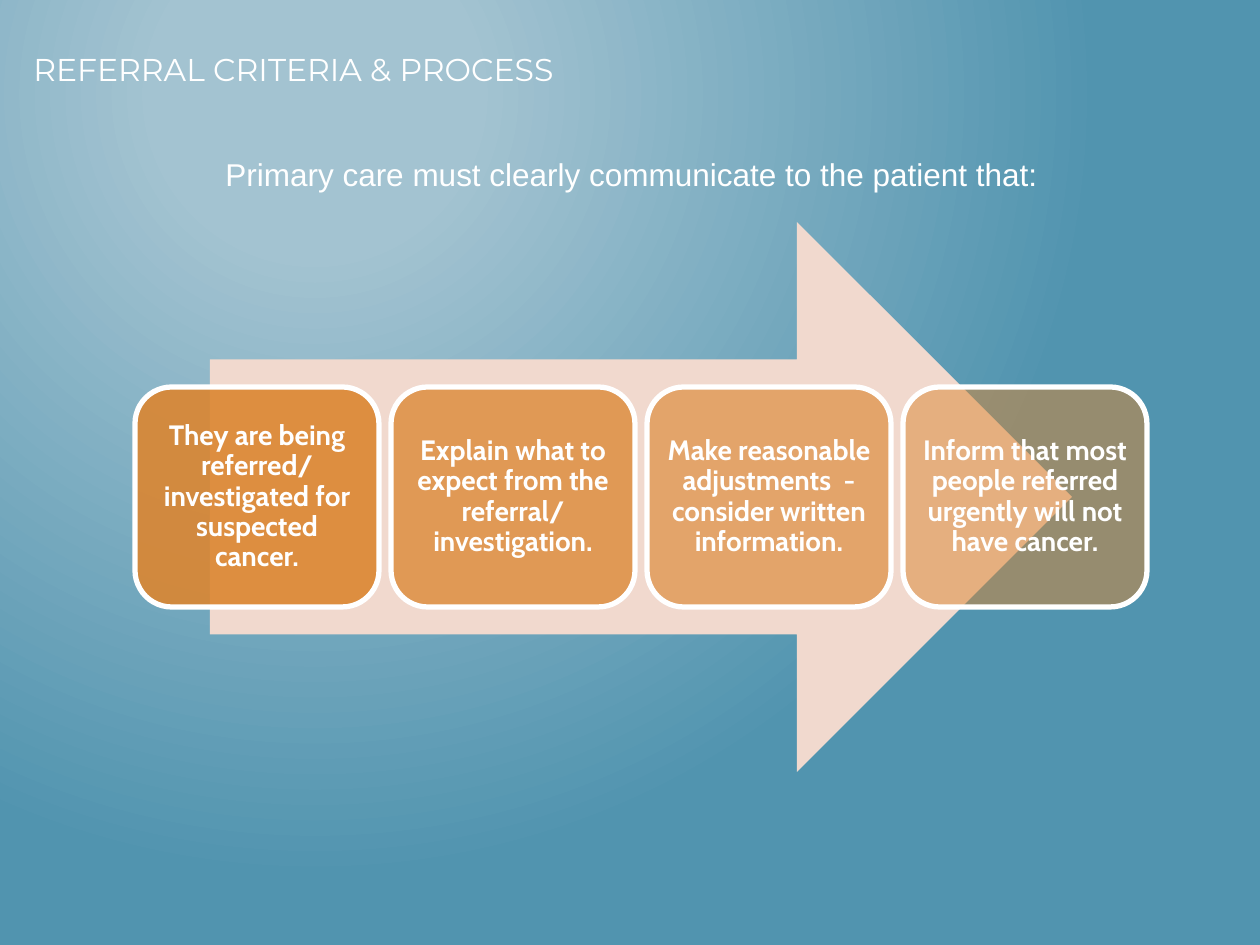
from lxml import etree
from pptx import Presentation
from pptx.dml.color import RGBColor
from pptx.enum.shapes import MSO_SHAPE
from pptx.enum.text import MSO_ANCHOR, MSO_AUTO_SIZE, PP_ALIGN
from pptx.oxml.ns import qn
from pptx.util import Pt

ARROW = MSO_SHAPE.RIGHT_ARROW
ROUND = MSO_SHAPE.ROUNDED_RECTANGLE
TOP, MIDDLE = MSO_ANCHOR.TOP, MSO_ANCHOR.MIDDLE
LEFT, CENTER = PP_ALIGN.LEFT, PP_ALIGN.CENTER
GROW = MSO_AUTO_SIZE.SHAPE_TO_FIT_TEXT

SCALE = 914400 / 126
WHITE, ORANGE, PEACH = "FFFFFF", "DB8631", "F1D9CE"
SKY, SEA = "A3C3D1", "5194AF"
STEPS = [
    ("They are being referred/ investigated for suspected cancer.", 90),
    ("Explain what to expect from the referral/ investigation.", 77),
    ("Make reasonable adjustments  - consider written information.", 63),
    ("Inform that most people referred urgently will not have cancer.", 50),
]


def px(n):
    return round(n * SCALE)


def color(code):
    return RGBColor.from_string(code)


def add_text(shapes, text, box, font="Arial", size=18, bold=False, align=LEFT,
             anchor=TOP, inset=None, lines=None, fit=None):
    shape = shapes.add_textbox(*map(px, box))
    frame = shape.text_frame
    frame.word_wrap = True
    frame.vertical_anchor = anchor
    if fit is not None:
        frame.auto_size = fit
    if inset is not None:
        frame.margin_left = frame.margin_right = px(inset)
        frame.margin_top = frame.margin_bottom = px(inset)
    para = frame.paragraphs[0]
    para.alignment = align
    if lines:
        para.line_spacing = lines
    run = para.add_run()
    run.text = text
    run.font.name = font
    run.font.size = Pt(size)
    run.font.bold = bold
    run.font.color.rgb = color(WHITE)


def add_form(shapes, kind, box, fill, alpha=100, line=None):
    shape = shapes.add_shape(kind, *map(px, box))
    shape.shadow.inherit = False
    shape.fill.solid()
    shape.fill.fore_color.rgb = color(fill)
    if alpha < 100:
        tone = shape.fill._xPr.find(qn("a:solidFill"))[0]
        etree.SubElement(tone, qn("a:alpha"), val=str(alpha * 1000))
    if line:
        shape.line.color.rgb = color(line)
        shape.line.width = Pt(3)
    else:
        shape.line.fill.background()


def paint_back(slide):
    fill = slide.background.fill
    fill.gradient()
    for stop, code, place in zip(fill.gradient_stops, (SKY, SEA), (0.2, 1)):
        stop.color.rgb = color(code)
        stop.position = place
    grad = slide.element.find(".//" + qn("a:gradFill"))
    grad.remove(grad.find(qn("a:lin")))
    ring = etree.Element(qn("a:path"), path="circle")
    etree.SubElement(ring, qn("a:fillToRect"),
                     l="50000", t="20000", r="100000", b="100000")
    grad.find(qn("a:gsLst")).addnext(ring)


def add_card(shapes, box, text, alpha):
    x, y, w, h = box
    pad = 11
    add_form(shapes, ROUND, box, ORANGE, alpha, WHITE)
    add_text(shapes, text, (x + pad, y + pad, w - 2 * pad, h - 2 * pad),
             font="Cabin", size=16, bold=True, align=CENTER, anchor=MIDDLE,
             inset=9, lines=0.9)


def add_flow(slide, box):
    x, y, w, h = box
    shapes = slide.shapes.add_group_shape().shapes
    add_form(shapes, ARROW, (x + 75, y, 862, h), PEACH)
    wide, high, gap = 244, 220, 12
    step = wide + gap
    top = y + (h - high) // 2
    for i, (text, alpha) in enumerate(STEPS):
        add_card(shapes, (x + i * step, top, wide, high), text, alpha)


def add_head(slide, box):
    x, y, w, h = box
    add_text(slide.shapes, "REFERRAL CRITERIA & PROCESS", (x, y, 1106, 84),
             font="Montserrat")
    add_text(slide.shapes,
             "Primary care must clearly communicate to the patient that:",
             (x + 192, y + 105, 867, 50), fit=GROW)


def main():
    deck = Presentation()
    deck.slide_width, deck.slide_height = px(1260), px(945)
    slide = deck.slides.add_slide(deck.slide_layouts[6])
    paint_back(slide)
    add_head(slide, (21, 44, 1106, 155))
    add_flow(slide, (135, 222, 1012, 550))
    deck.save("out.pptx")


if __name__ == "__main__":
    main()
